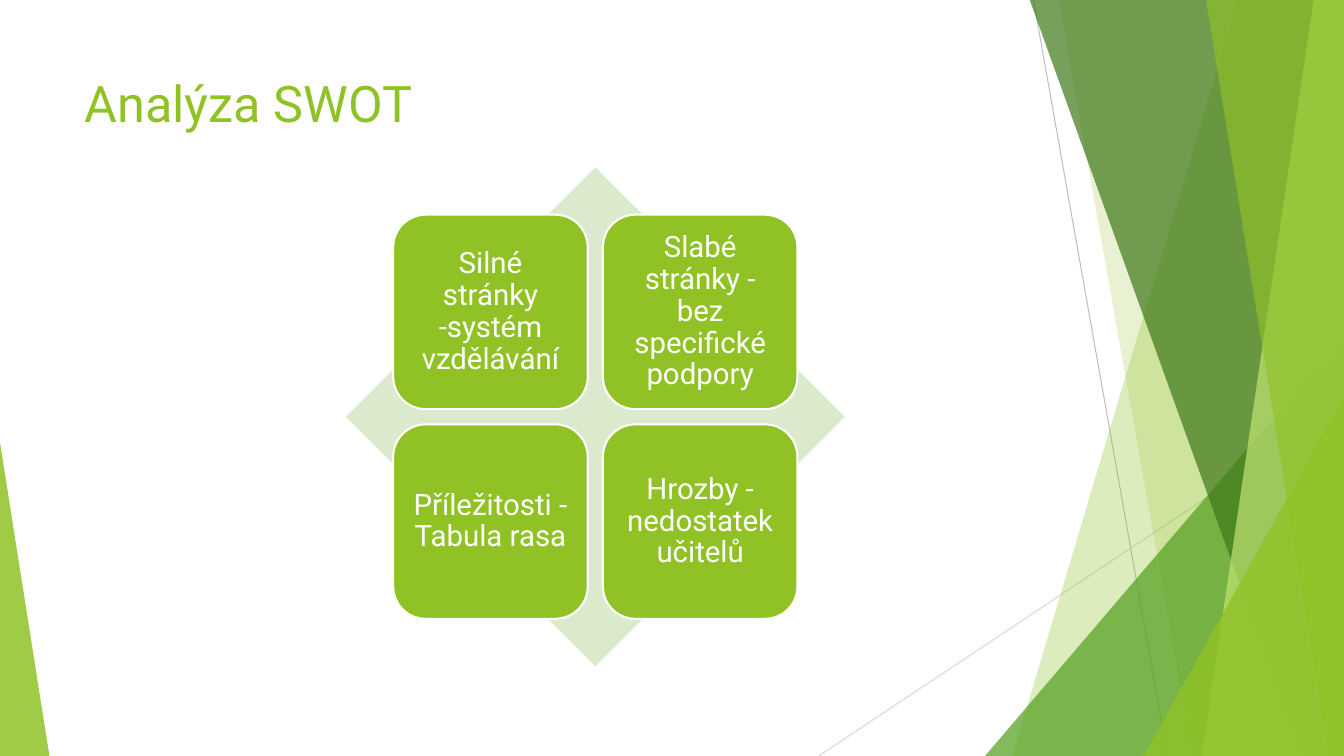
from dataclasses import dataclass

from lxml.etree import SubElement
from pptx import Presentation
from pptx.dml.color import RGBColor
from pptx.enum.shapes import MSO_CONNECTOR as Connector, MSO_SHAPE as Preset
from pptx.enum.text import MSO_ANCHOR as Anchor, PP_ALIGN as Align
from pptx.oxml.ns import qn
from pptx.shapes.autoshape import Shape
from pptx.shapes.shapetree import SlideShapes
from pptx.text.text import TextFrame
from pptx.util import Emu, Pt

EMU_PER_PX = 9144
WIDTH, HEIGHT = 1333, 750
FONT = "Roboto"

WHITE = RGBColor(0xFF, 0xFF, 0xFF)
LIME = RGBColor(0x90, 0xC2, 0x26)
PALE_LIME = RGBColor(0xC0, 0xE4, 0x74)
GREEN = RGBColor(0x54, 0xA0, 0x21)
DARK_GREEN = RGBColor(0x3F, 0x78, 0x19)
PALE_GREEN = RGBColor(0xDB, 0xE9, 0xCD)
GREY = RGBColor(0xBF, 0xBF, 0xBF)
LIGHT_GREY = RGBColor(0xD9, 0xD9, 0xD9)


@dataclass(frozen=True)
class Ray:
    start: tuple[int, int]
    end: tuple[int, int]
    color: RGBColor


@dataclass(frozen=True)
class Band:
    top_left: int
    bottom_left: int
    color: RGBColor
    opacity: int


@dataclass(frozen=True)
class Wedge:
    left: int
    top: int
    width: int
    apex: int
    color: RGBColor
    opacity: int


RAYS = (
    Ray((1025, 0), (1158, HEIGHT), GREY),
    Ray((WIDTH, 403), (812, HEIGHT), LIGHT_GREY),
)
FACETS = (
    Band(1228, 1004, LIME, 30),
    Band(1050, 1183, LIME, 20),
    Wedge(977, 333, 356, 1, GREEN, 72),
    Band(1021, 1291, DARK_GREEN, 70),
    Band(1303, 1192, PALE_LIME, 70),
    Band(1196, 1318, LIME, 65),
    Wedge(1134, 393, 199, 1, LIME, 80),
    Wedge(0, 439, 49, 0, LIME, 85),
)

QUADRANTS = (
    "Silné stránky -systém vzdělávání",
    "Slabé stránky - bez specifické podpory",
    "Příležitosti - Tabula rasa",
    "Hrozby - nedostatek učitelů",
)
QUADRANT_LEFT, QUADRANT_TOP = 390, 213
QUADRANT_SIZE, QUADRANT_PITCH = 193, 208


def px(length: int) -> Emu:
    return Emu(length * EMU_PER_PX)


def paint(shape: Shape, color: RGBColor, opacity: int = 100) -> None:
    shape.shadow.inherit = False
    shape.fill.solid()
    shape.fill.fore_color.rgb = color
    shape.line.fill.background()
    if opacity < 100:
        solid = shape.fill._xPr.find(qn("a:solidFill"))
        SubElement(solid[0], qn("a:alpha")).set("val", str(opacity * 1000))


def write(frame: TextFrame, text: str, size: int, color: RGBColor,
          anchor: Anchor, align: Align, spacing: float) -> None:
    frame.word_wrap = True
    frame.vertical_anchor = anchor
    paragraph = frame.paragraphs[0]
    paragraph.alignment = align
    paragraph.line_spacing = spacing
    run = paragraph.add_run()
    run.text = text
    run.font.name = FONT
    run.font.size = Pt(size)
    run.font.color.rgb = color


def draw_ray(shapes: SlideShapes, ray: Ray) -> None:
    line = shapes.add_connector(
        Connector.STRAIGHT, *map(px, ray.start + ray.end))
    line.line.color.rgb = ray.color
    line.line.width = Pt(0.75)
    SubElement(line._element.spPr, qn("a:effectLst"))


def draw_facet(shapes: SlideShapes, facet: Band | Wedge) -> None:
    if isinstance(facet, Band):
        outline = shapes.build_freeform(facet.top_left, -1, scale=EMU_PER_PX)
        outline.add_line_segments(
            ((WIDTH, -1), (WIDTH, HEIGHT), (facet.bottom_left, HEIGHT)))
        shape = outline.convert_to_shape()
    else:
        shape = shapes.add_shape(
            Preset.ISOSCELES_TRIANGLE, px(facet.left), px(facet.top),
            px(facet.width), px(HEIGHT - facet.top))
        shape.adjustments[0] = facet.apex
    paint(shape, facet.color, facet.opacity)


def draw_quadrant(shapes: SlideShapes, index: int, text: str) -> None:
    row, column = divmod(index, 2)
    quadrant = shapes.add_shape(
        Preset.ROUNDED_RECTANGLE,
        px(QUADRANT_LEFT + column * QUADRANT_PITCH),
        px(QUADRANT_TOP + row * QUADRANT_PITCH),
        px(QUADRANT_SIZE), px(QUADRANT_SIZE))
    paint(quadrant, LIME)
    quadrant.line.color.rgb = WHITE
    quadrant.line.width = Pt(1.5)
    frame = quadrant.text_frame
    frame.margin_left = frame.margin_right = px(9)
    frame.margin_top = frame.margin_bottom = px(9)
    write(frame, text, 21, WHITE, Anchor.MIDDLE, Align.CENTER, 0.9)


def main() -> None:
    deck = Presentation()
    deck.slide_width, deck.slide_height = px(WIDTH), px(HEIGHT)
    shapes = deck.slides.add_slide(deck.slide_layouts[6]).shapes

    for ray in RAYS:
        draw_ray(shapes, ray)
    for facet in FACETS:
        draw_facet(shapes, facet)

    heading = shapes.add_textbox(px(74), px(67), px(940), px(144))
    write(heading.text_frame, "Analýza SWOT", 36, LIME,
          Anchor.TOP, Align.LEFT, 1.0)

    backdrop = shapes.add_shape(
        Preset.DIAMOND, px(343), px(166), px(495), px(495))
    paint(backdrop, PALE_GREEN)
    for index, text in enumerate(QUADRANTS):
        draw_quadrant(shapes, index, text)

    deck.save("out.pptx")


if __name__ == "__main__":
    main()
